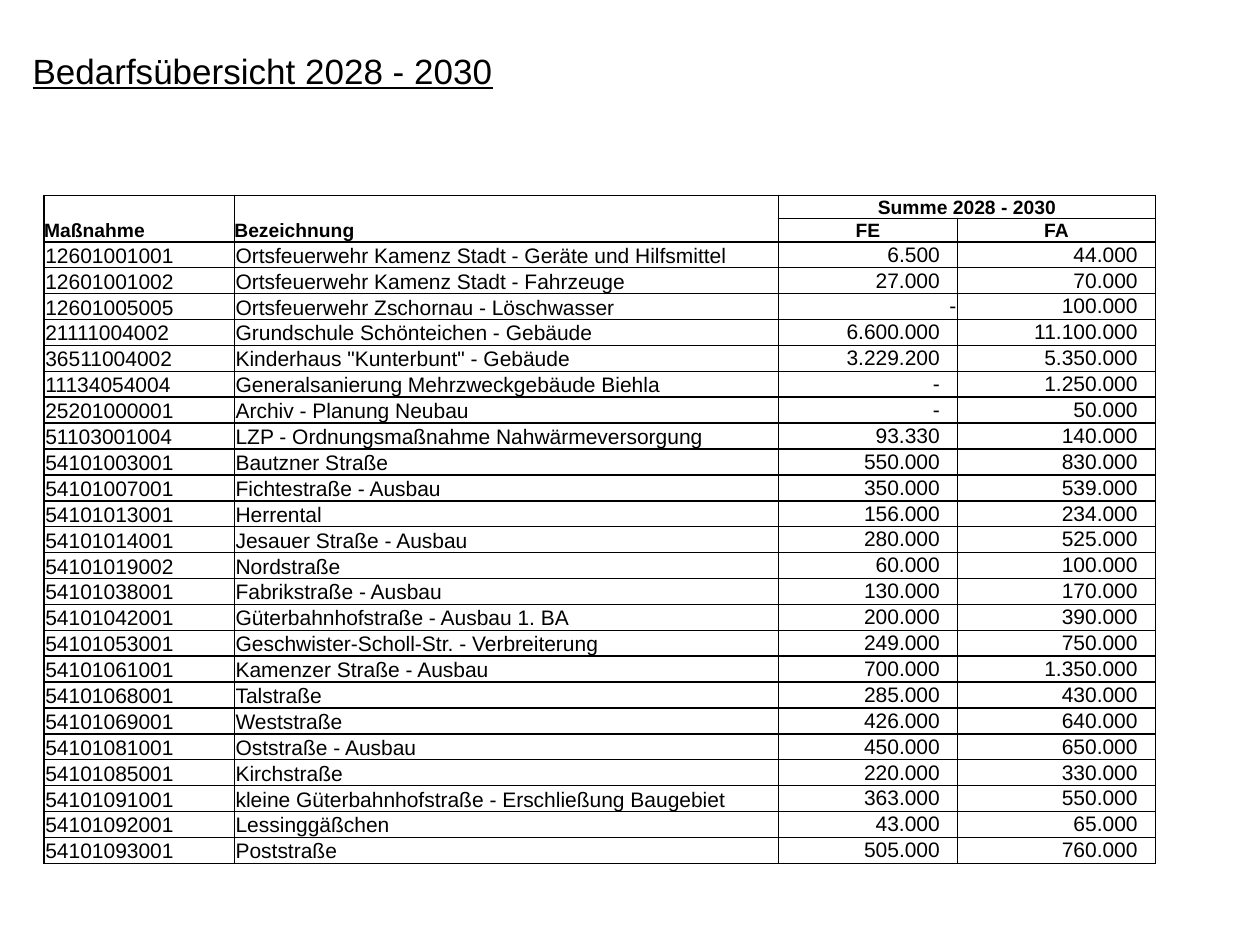
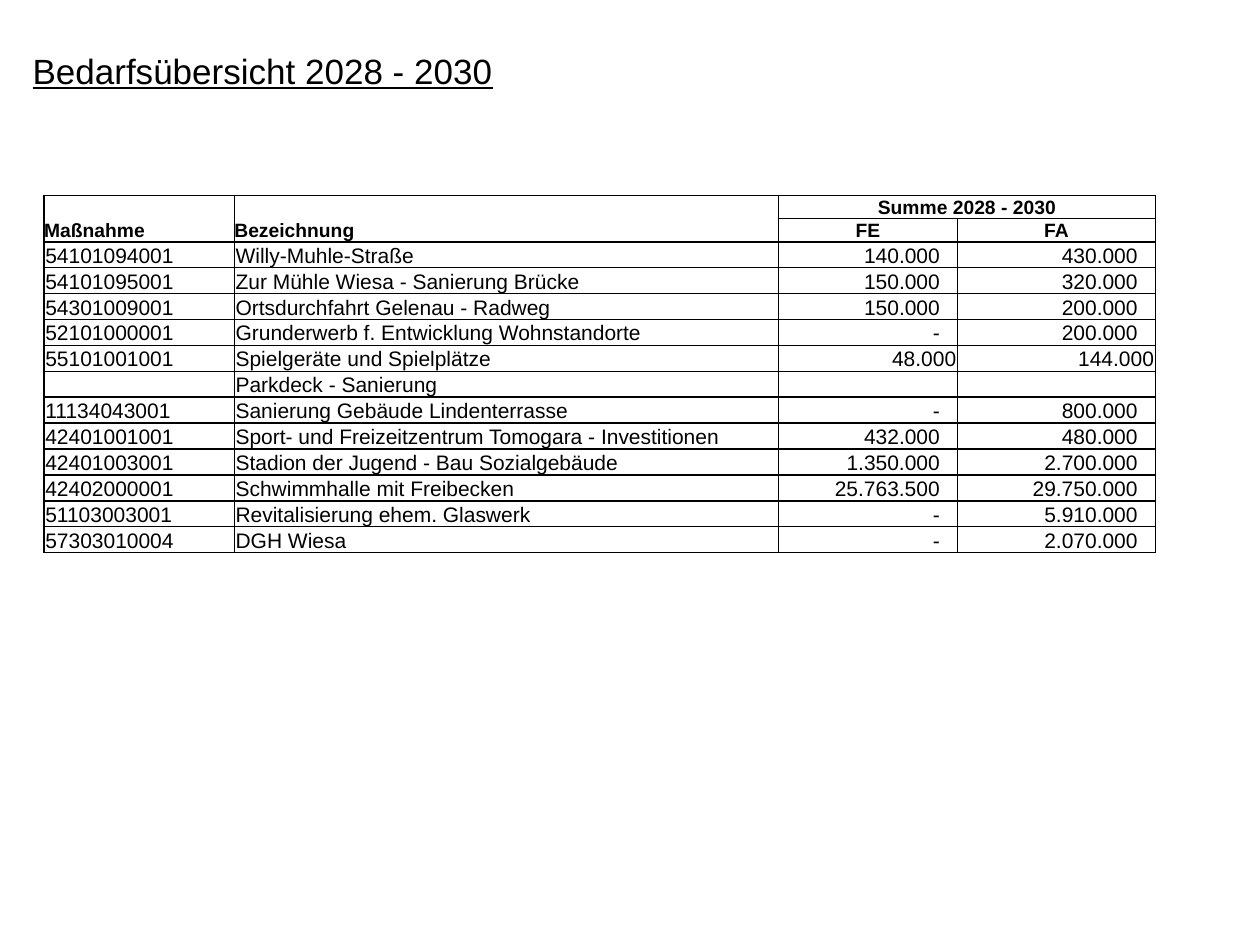
from dataclasses import dataclass
from typing import NamedTuple

from lxml import etree
from pptx import Presentation
from pptx.dml.color import RGBColor
from pptx.enum.text import MSO_ANCHOR, MSO_AUTO_SIZE, PP_ALIGN
from pptx.oxml.ns import qn
from pptx.util import Inches, Pt

LEFT, CENTER, RIGHT = PP_ALIGN.LEFT, PP_ALIGN.CENTER, PP_ALIGN.RIGHT
MIDDLE, BOTTOM = MSO_ANCHOR.MIDDLE, MSO_ANCHOR.BOTTOM
FIT_SHAPE = MSO_AUTO_SIZE.SHAPE_TO_FIT_TEXT


@dataclass(frozen=True)
class Theme:
    font: str = "Arial"
    ink: str = "000000"
    title_size: int = 20
    head_size: int = 11
    body_size: int = 12
    border_width: int = 1


class Measure(NamedTuple):
    code: str
    label: str
    income: str
    expense: str
    income_flush: bool = False
    expense_flush: bool = False


class CellStyle(NamedTuple):
    size: int
    bold: bool = False
    align: PP_ALIGN = LEFT
    anchor: MSO_ANCHOR = BOTTOM
    left_inset: float = 0.01
    right_inset: float = 0.01


class Overview(NamedTuple):
    measures: list[Measure]
    amount_anchor: MSO_ANCHOR


THEME = Theme()
TITLE = "Bedarfsübersicht 2028 - 2030"
COLUMN_WIDTHS = [1.51, 4.32, 1.42, 1.57]
HEAD_ROWS = [["Maßnahme", "Bezeichnung", "Summe 2028 - 2030", ""], ["", "", "FE", "FA"]]
HEAD_HEIGHT = Inches(0.37) // 2
ROW_HEIGHT = Inches(4.94) // 24
AMOUNT_INSET = 0.14

# Content of the two pages
FIRST_PAGE = [
    Measure("12601001001", "Ortsfeuerwehr Kamenz Stadt - Geräte und Hilfsmittel", "6.500", "44.000"),
    Measure("12601001002", "Ortsfeuerwehr Kamenz Stadt - Fahrzeuge", "27.000", "70.000"),
    Measure("12601005005", "Ortsfeuerwehr Zschornau - Löschwasser", "-", "100.000", income_flush=True),
    Measure("21111004002", "Grundschule Schönteichen - Gebäude", "6.600.000", "11.100.000"),
    Measure("36511004002", "Kinderhaus \"Kunterbunt\" - Gebäude", "3.229.200", "5.350.000"),
    Measure("11134054004", "Generalsanierung Mehrzweckgebäude Biehla", "-", "1.250.000"),
    Measure("25201000001", "Archiv - Planung Neubau", "-", "50.000"),
    Measure("51103001004", "LZP - Ordnungsmaßnahme Nahwärmeversorgung", "93.330", "140.000"),
    Measure("54101003001", "Bautzner Straße", "550.000", "830.000"),
    Measure("54101007001", "Fichtestraße - Ausbau", "350.000", "539.000"),
    Measure("54101013001", "Herrental", "156.000", "234.000"),
    Measure("54101014001", "Jesauer Straße - Ausbau", "280.000", "525.000"),
    Measure("54101019002", "Nordstraße", "60.000", "100.000"),
    Measure("54101038001", "Fabrikstraße - Ausbau", "130.000", "170.000"),
    Measure("54101042001", "Güterbahnhofstraße - Ausbau 1. BA", "200.000", "390.000"),
    Measure("54101053001", "Geschwister-Scholl-Str. - Verbreiterung", "249.000", "750.000"),
    Measure("54101061001", "Kamenzer Straße - Ausbau", "700.000", "1.350.000"),
    Measure("54101068001", "Talstraße", "285.000", "430.000"),
    Measure("54101069001", "Weststraße", "426.000", "640.000"),
    Measure("54101081001", "Oststraße - Ausbau", "450.000", "650.000"),
    Measure("54101085001", "Kirchstraße", "220.000", "330.000"),
    Measure("54101091001", "kleine Güterbahnhofstraße - Erschließung Baugebiet", "363.000", "550.000"),
    Measure("54101092001", "Lessinggäßchen", "43.000", "65.000"),
    Measure("54101093001", "Poststraße", "505.000", "760.000"),
]
SECOND_PAGE = [
    Measure("54101094001", "Willy-Muhle-Straße", "140.000", "430.000"),
    Measure("54101095001", "Zur Mühle Wiesa - Sanierung Brücke", "150.000", "320.000"),
    Measure("54301009001", "Ortsdurchfahrt Gelenau - Radweg", "150.000", "200.000"),
    Measure("52101000001", "Grunderwerb f. Entwicklung Wohnstandorte", "-", "200.000"),
    Measure("55101001001", "Spielgeräte und Spielplätze", "48.000", "144.000", True, True),
    Measure("", "Parkdeck - Sanierung", "", ""),
    Measure("11134043001", "Sanierung Gebäude Lindenterrasse", "-", "800.000"),
    Measure("42401001001", "Sport- und Freizeitzentrum Tomogara - Investitionen", "432.000", "480.000"),
    Measure("42401003001", "Stadion der Jugend - Bau Sozialgebäude", "1.350.000", "2.700.000"),
    Measure("42402000001", "Schwimmhalle mit Freibecken", "25.763.500", "29.750.000"),
    Measure("51103003001", "Revitalisierung ehem. Glaswerk", "-", "5.910.000"),
    Measure("57303010004", "DGH Wiesa", "-", "2.070.000"),
]
OVERVIEWS = [Overview(FIRST_PAGE, MIDDLE), Overview(SECOND_PAGE, BOTTOM)]


def add_span(para, text: str, size: int, bold: bool = False, underline: bool = False) -> None:
    span = para.add_run()
    span.text = text
    font = span.font
    font.name, font.size = THEME.font, Pt(size)
    font.bold, font.underline = bold, underline
    font.color.rgb = RGBColor.from_string(THEME.ink)


def add_title(page) -> None:
    box = page.shapes.add_textbox(Inches(0.16), Inches(0.34), Inches(9.69), Inches(0.44))
    box.text_frame.word_wrap = True
    box.text_frame.auto_size = FIT_SHAPE
    add_span(box.text_frame.paragraphs[0], TITLE, THEME.title_size, underline=True)


def draw_borders(cell) -> None:
    properties = cell._tc.get_or_add_tcPr()
    for position, side in enumerate(("lnL", "lnR", "lnT", "lnB")):
        line = etree.Element(qn(f"a:{side}"), w=str(Pt(THEME.border_width)))
        fill = etree.SubElement(line, qn("a:solidFill"))
        etree.SubElement(fill, qn("a:srgbClr"), val=THEME.ink)
        properties.insert(position, line)


def fill_cell(cell, text: str, style: CellStyle) -> None:
    cell.fill.background()
    draw_borders(cell)
    cell.vertical_anchor = style.anchor
    cell.margin_top = cell.margin_bottom = 0
    cell.margin_left, cell.margin_right = Inches(style.left_inset), Inches(style.right_inset)
    para = cell.text_frame.paragraphs[0]
    para.alignment = style.align
    if text:
        add_span(para, text, style.size, style.bold)
    else:
        # Keeps empty cells from stretching their row
        end = etree.SubElement(para._p, qn("a:endParaRPr"))
        end.set("sz", str(style.size * 100))


def amount_style(anchor: MSO_ANCHOR, flush: bool) -> CellStyle:
    right_inset = 0.01 if flush else AMOUNT_INSET
    return CellStyle(THEME.body_size, align=RIGHT, anchor=anchor, right_inset=right_inset)


def add_overview(page, overview: Overview) -> None:
    head_count = len(HEAD_ROWS)
    row_count = head_count + len(overview.measures)
    height = head_count * HEAD_HEIGHT + len(overview.measures) * ROW_HEIGHT
    table = page.shapes.add_table(row_count, len(COLUMN_WIDTHS), Inches(0.35), Inches(1.55),
                                  Inches(sum(COLUMN_WIDTHS)), height).table
    table.first_row = table.horz_banding = False
    for column, width in zip(table.columns, COLUMN_WIDTHS):
        column.width = Inches(width)
    for index, row in enumerate(table.rows):
        row.height = HEAD_HEIGHT if index < head_count else ROW_HEIGHT

    # Two-row heading
    for row, texts in enumerate(HEAD_ROWS):
        for column, text in enumerate(texts):
            align = LEFT if column < 2 else CENTER
            fill_cell(table.cell(row, column), text,
                      CellStyle(THEME.head_size, True, align, left_inset=0, right_inset=0))
    for column in (0, 1):
        table.cell(0, column).merge(table.cell(1, column))
    table.cell(0, 2).merge(table.cell(0, 3))

    # One row for each measure
    plain = CellStyle(THEME.body_size)
    for row, measure in enumerate(overview.measures, head_count):
        styles = [plain, plain,
                  amount_style(overview.amount_anchor, measure.income_flush),
                  amount_style(overview.amount_anchor, measure.expense_flush)]
        for column, (text, style) in enumerate(zip(measure, styles)):
            fill_cell(table.cell(row, column), text, style)


def main() -> None:
    deck = Presentation()
    deck.slide_width, deck.slide_height = Inches(10), Inches(7.5)
    for overview in OVERVIEWS:
        page = deck.slides.add_slide(deck.slide_layouts[6])
        add_title(page)
        add_overview(page, overview)
    deck.save("out.pptx")


if __name__ == "__main__":
    main()
